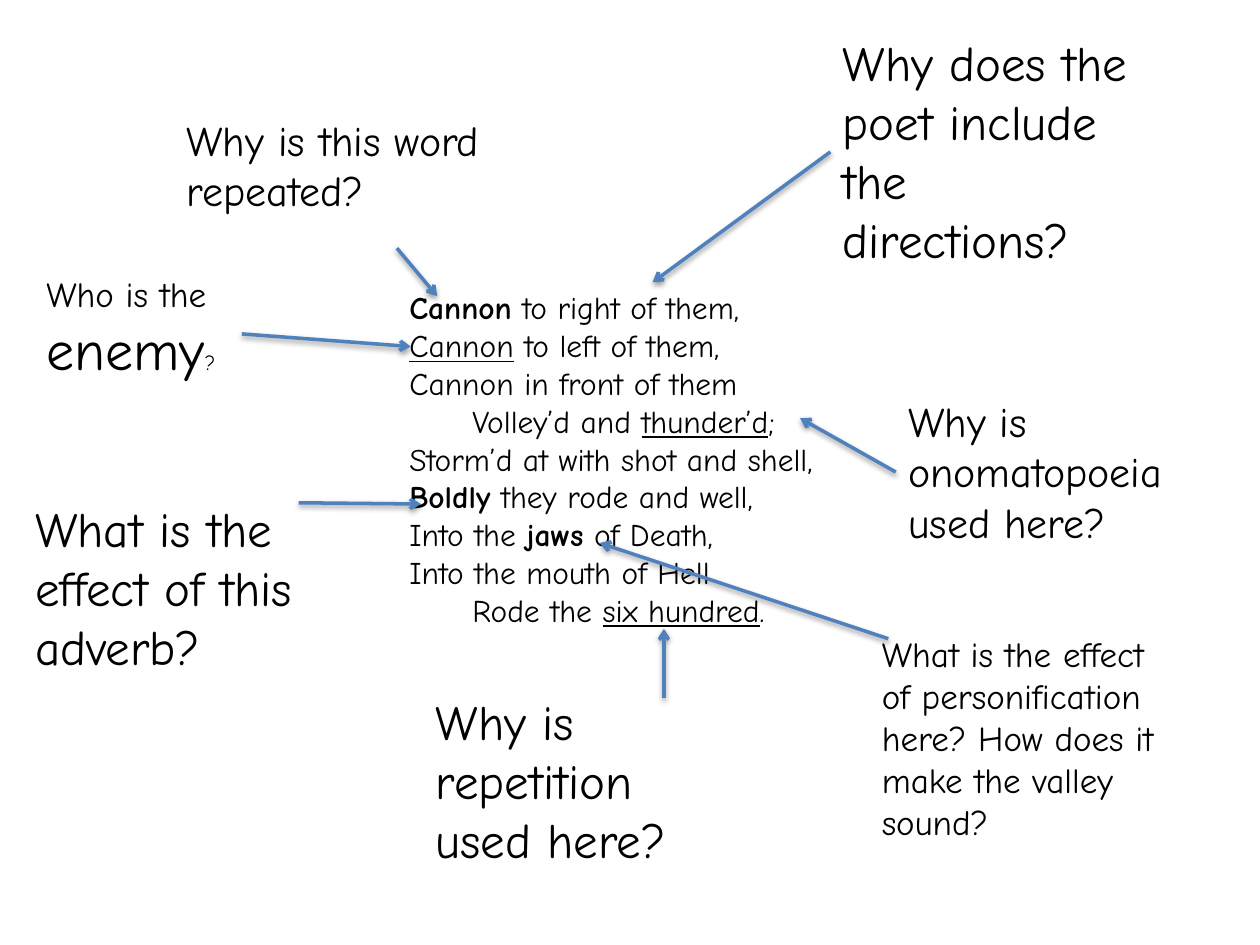
from lxml import etree
from pptx import Presentation
from pptx.dml.color import RGBColor
from pptx.enum.shapes import MSO_CONNECTOR
from pptx.enum.text import MSO_AUTO_SIZE
from pptx.oxml import parse_xml
from pptx.oxml.ns import nsdecls, qn
from pptx.util import Pt

FONT = "Comic Neue"
BLACK, BLUE = "000000", "4F81BD"
TOP, LEFT = 0, 1

# Each line is a list of (text, style) spans.
POEM_BOX = (226.8, 161.3, 292.3, 203.8)
POEM = [
    [("Cannon", "bold"), (" to right of them,", "")],
    [("Cannon", "underline"), (" to left of them,", "")],
    [("Cannon in front of them", "")],
    [("\tVolley’d and ", ""), ("thunder’d", "underline"), (";", "")],
    [("Storm’d at with shot and shell,", "")],
    [("Boldly", "bold"), (" they rode and well,", "")],
    [("Into the ", ""), ("jaws", "bold"), (" of Death,", "")],
    [("Into the mouth of Hell", "")],
    [("\tRode the ", ""), ("six hundred", "underline"), (".", "")],
]

# name: (box, [(text, size), ...])
QUESTIONS = {
    "repeated word": ((99.4, 61.9, 234, 65.4), [("Why is this word repeated?", 24)]),
    "enemy": ((19.4, 151.9, 183.6, 70.6),
              [("Who is the ", 20), ("enemy", 32), ("?", 12)]),
    "directions": ((474.5, 15.1, 183.6, 143.4),
                   [("Why does the poet include the directions?", 28)]),
    "onomatopoeia": ((511.9, 222.5, 183.6, 94.5),
                     [("Why is onomatopoeia used here?", 24)]),
    "adverb": ((13, 281.5, 183.6, 109), [("What is the effect of this adverb?", 28)]),
    "personification": ((496.8, 357.8, 183.6, 152.7),
                        [("What is the effect of personification here? "
                          "How does it make the valley sound?", 20)]),
    "repetition": ((241.9, 391.7, 183.6, 109), [("Why is repetition used here?", 28)]),
}

# question name: (start, end)
ARROWS = {
    "repeated word": ((226.8, 141.8), (249.8, 169.2)),
    "directions": ((474.5, 86.8), (373, 161.3)),
    "enemy": ((138.2, 190.8), (234.7, 198)),
    "onomatopoeia": ((511.9, 269.3), (457.2, 239)),
    "adverb": ((170.6, 287.3), (240.5, 288)),
    "personification": ((507.6, 365), (342.7, 310.3)),
    "repetition": ((379.4, 398.9), (379.4, 359.3)),
}

SHADOW = (
    f'<a:effectLst {nsdecls("a")}>'
    '<a:outerShdw blurRad="40000" dist="20000" dir="5400000" rotWithShape="0">'
    '<a:srgbClr val="000000"><a:alpha val="38000"/></a:srgbClr>'
    '</a:outerShdw></a:effectLst>'
)


def color(hex_string):
    return RGBColor.from_string(hex_string)


def add_text_box(page, box):
    shape = page.shapes.add_textbox(*map(Pt, box))
    shape.text_frame.word_wrap = True
    shape.text_frame.auto_size = MSO_AUTO_SIZE.SHAPE_TO_FIT_TEXT
    return shape


def add_span(para, text, size, style=""):
    span = para.add_run()
    span.text = text
    font = span.font
    font.name, font.size = FONT, Pt(size)
    font.color.rgb = color(BLACK)
    if style == "bold":
        font.bold = True
    elif style == "underline":
        font.underline = True


def add_poem(page, box):
    shape = add_text_box(page, box)
    frame = shape.text_frame
    for index, line in enumerate(POEM):
        para = frame.add_paragraph() if index else frame.paragraphs[0]
        for text, style in line:
            add_span(para, text, 18, style)
    return shape


def add_question(page, box, spans):
    shape = add_text_box(page, box)
    for text, size in spans:
        add_span(shape.text_frame.paragraphs[0], text, size)
    return shape


def add_arrow(page, start, end):
    arrow = page.shapes.add_connector(MSO_CONNECTOR.STRAIGHT, *map(Pt, start + end))
    arrow.line.color.rgb = color(BLUE)
    arrow.line.width = Pt(2)
    etree.SubElement(arrow.line._get_or_add_ln(), qn("a:tailEnd"), type="arrow")
    arrow._element.spPr.append(parse_xml(SHADOW))
    return arrow


def add_annotated_poem(page):
    poem = add_poem(page, POEM_BOX)
    questions = {name: add_question(page, box, spans)
                 for name, (box, spans) in QUESTIONS.items()}
    arrows = {name: add_arrow(page, start, end)
              for name, (start, end) in ARROWS.items()}
    for name in ("directions", "onomatopoeia"):
        arrows[name].begin_connect(questions[name], LEFT)
    arrows["directions"].end_connect(poem, TOP)


def main():
    deck = Presentation()
    deck.slide_width, deck.slide_height = Pt(720), Pt(540)
    page = deck.slides.add_slide(deck.slide_layouts[6])
    add_annotated_poem(page)
    deck.save("out.pptx")


if __name__ == "__main__":
    main()
